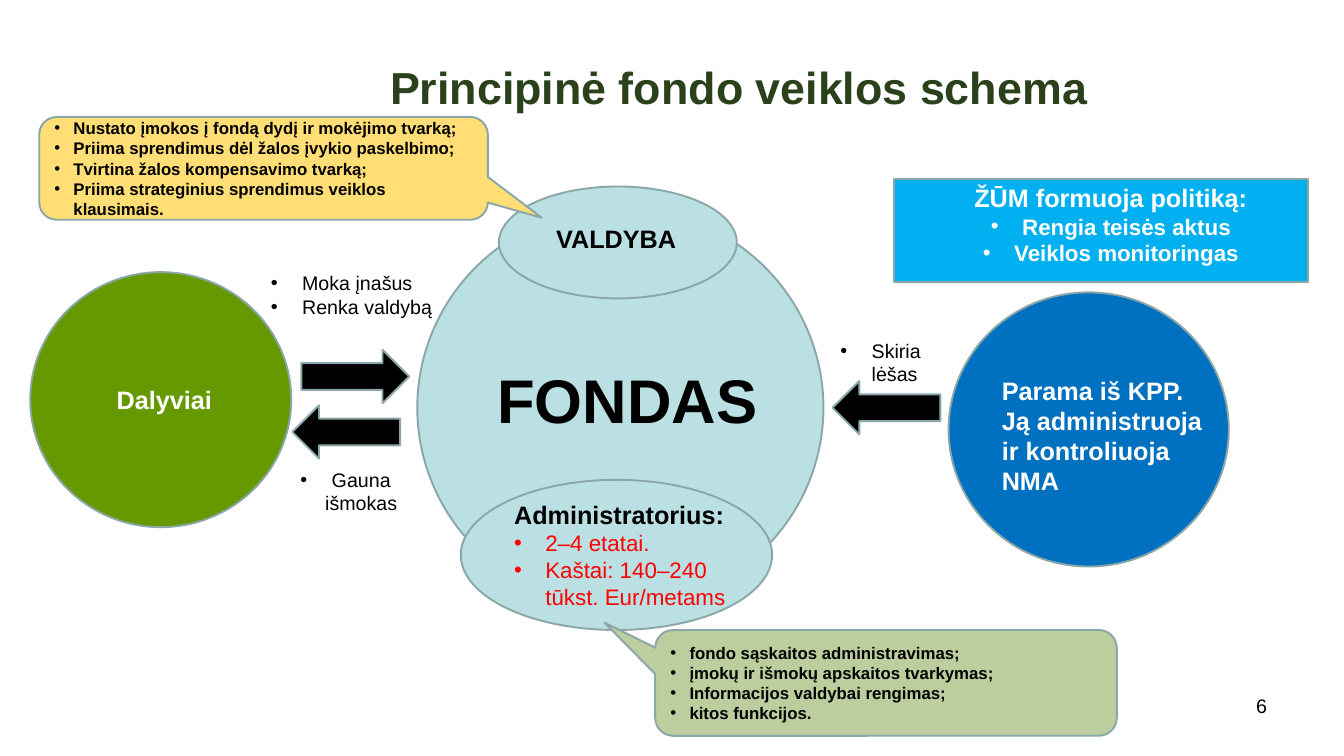
from dataclasses import dataclass
from typing import Optional

from lxml.etree import SubElement
from pptx import Presentation
from pptx.dml.color import RGBColor
from pptx.enum.shapes import MSO_SHAPE
from pptx.enum.text import MSO_ANCHOR, MSO_AUTO_SIZE, PP_ALIGN
from pptx.oxml.ns import qn
from pptx.util import Inches, Pt


@dataclass(frozen=True)
class Theme:
    font: str = "Arial"
    ink: str = "000000"
    paper: str = "FFFFFF"
    heading: str = "2A411B"
    alert: str = "FF0000"
    outline: str = "8AA6A8"
    members: str = "669900"
    support: str = "0070C0"
    fund: str = "BBE0E3"
    policy: str = "00B0F0"
    board_duties: str = "FFDE75"
    admin_duties: str = "BCCE9E"
    outline_width: float = 1.35
    hub: int = 44
    title: int = 32
    label: int = 18
    detail: int = 16
    note: int = 14
    duty: int = 12


THEME = Theme()
WIDTH, HEIGHT = Inches(13.33), Inches(7.5)
WIDE, NARROW = 0.31, 0.19  # bullet indents in inches


@dataclass(frozen=True)
class Box:
    """Place and size in percent of the slide's width and height."""
    left: float
    top: float
    width: float
    height: float

    def emu(self) -> tuple[int, int, int, int]:
        return (int(WIDTH * self.left / 100), int(HEIGHT * self.top / 100),
                int(WIDTH * self.width / 100), int(HEIGHT * self.height / 100))


@dataclass(frozen=True)
class Line:
    text: str
    size: int = THEME.label
    color: str = THEME.ink
    bold: bool = True
    indent: float = 0
    align: PP_ALIGN = PP_ALIGN.LEFT


@dataclass(frozen=True)
class Figure:
    kind: MSO_SHAPE
    box: Box
    fill: str
    adjustments: tuple[float, ...] = ()
    lines: tuple[Line, ...] = ()


@dataclass(frozen=True)
class Caption:
    box: Box
    lines: tuple[Line, ...]
    placeholder: Optional[int] = None
    anchor: MSO_ANCHOR = MSO_ANCHOR.TOP


def note(text: str, align: PP_ALIGN = PP_ALIGN.LEFT) -> Line:
    return Line(text, THEME.note, bold=False, indent=WIDE, align=align)


def duties(*texts: str) -> tuple[Line, ...]:
    return tuple(Line(text, THEME.duty, indent=NARROW) for text in texts)


def white(text: str, size: int = THEME.label, indent: float = 0,
          align: PP_ALIGN = PP_ALIGN.CENTER) -> Line:
    return Line(text, size, THEME.paper, indent=indent, align=align)


def cost(text: str) -> Line:
    return Line(text, THEME.detail, THEME.alert, False, WIDE)


def arrow(kind: MSO_SHAPE, left: float, top: float) -> Figure:
    return Figure(kind, Box(left, top, 8.02, 7.07), THEME.ink)


def write(frame, lines: tuple[Line, ...], anchor: MSO_ANCHOR) -> None:
    frame.word_wrap = True
    frame.auto_size = MSO_AUTO_SIZE.NONE
    frame.vertical_anchor = anchor
    for index, line in enumerate(lines):
        paragraph = frame.add_paragraph() if index else frame.paragraphs[0]
        properties = paragraph._p.get_or_add_pPr()
        properties.set("marL", str(Inches(line.indent)))
        properties.set("indent", str(-Inches(line.indent)))
        if line.indent:
            SubElement(properties, qn("a:buFont")).set("typeface", THEME.font)
            SubElement(properties, qn("a:buChar")).set("char", "•")
        else:
            SubElement(properties, qn("a:buNone"))
        paragraph.alignment = line.align
        paragraph.space_before = Pt(0)
        run = paragraph.add_run()
        run.text = line.text
        run.font.name = THEME.font
        run.font.size = Pt(line.size)
        run.font.bold = line.bold
        run.font.color.rgb = RGBColor.from_string(line.color)


def draw_figure(slide, figure: Figure) -> None:
    shape = slide.shapes.add_shape(figure.kind, *figure.box.emu())
    shape.shadow.inherit = False
    shape.fill.solid()
    shape.fill.fore_color.rgb = RGBColor.from_string(figure.fill)
    shape.line.color.rgb = RGBColor.from_string(THEME.outline)
    shape.line.width = Pt(THEME.outline_width)
    for index, value in enumerate(figure.adjustments):
        shape.adjustments[index] = value
    if figure.lines:
        write(shape.text_frame, figure.lines, MSO_ANCHOR.MIDDLE)


def draw_caption(slide, caption: Caption) -> None:
    if caption.placeholder is None:
        holder = slide.shapes.add_textbox(*caption.box.emu())
    else:
        holder = slide.placeholders[caption.placeholder]
        holder.left, holder.top, holder.width, holder.height = caption.box.emu()
        holder.element.getparent().append(holder.element)  # bring to front
    write(holder.text_frame, caption.lines, caption.anchor)


CENTER = PP_ALIGN.CENTER
OVAL, CALLOUT = MSO_SHAPE.OVAL, MSO_SHAPE.ROUNDED_RECTANGULAR_CALLOUT

SCHEME: tuple[Figure | Caption, ...] = (
    # Title and page number
    Caption(Box(10, 4.93, 90, 12.93),
            (Line("Principinė fondo veiklos schema", THEME.title, THEME.heading, align=CENTER),),
            0, MSO_ANCHOR.MIDDLE),
    Caption(Box(71.7, 91.07, 23.32, 6.93),
            (Line("6", THEME.note, bold=False, align=PP_ALIGN.RIGHT),)),
    # Members and support
    Figure(OVAL, Box(2.25, 36, 19.42, 33.73), THEME.members),
    Figure(OVAL, Box(70.58, 38.67, 20.85, 36.27), THEME.support),
    Caption(Box(4.12, 50.13, 16.2, 5.33), (white("Dalyviai"),)),
    Caption(Box(73.8, 48.93, 17.18, 17.47),
            (white("Parama iš KPP.", align=PP_ALIGN.LEFT),
             white("Ją administruoja ir kontroliuoja NMA", align=PP_ALIGN.LEFT))),
    # Fund with its board and administrator
    Figure(OVAL, Box(31.05, 27.47, 30.22, 52.93), THEME.fund),
    Caption(Box(34.65, 47.2, 24.08, 11.2), (Line("FONDAS", THEME.hub, align=CENTER),)),
    Figure(OVAL, Box(37.12, 24.67, 17.7, 14.8), THEME.fund),
    Caption(Box(40.65, 28.93, 12.9, 5.33), (Line("VALDYBA"),)),
    Figure(OVAL, Box(34.28, 63.47, 23.17, 19.87), THEME.fund),
    Caption(Box(37.5, 65.33, 17.78, 16.13),
            (Line("Administratorius:"), cost("2–4 etatai."),
             cost("Kaštai: 140–240 tūkst. Eur/metams")), 1),
    # Money flows
    arrow(MSO_SHAPE.RIGHT_ARROW, 22.43, 46.27),
    arrow(MSO_SHAPE.LEFT_ARROW, 21.75, 53.6),
    arrow(MSO_SHAPE.LEFT_ARROW, 61.95, 50.4),
    Caption(Box(19.42, 35.2, 16.35, 7.6), (note("Moka įnašus"), note("Renka valdybą"))),
    Caption(Box(18.82, 61.2, 13.8, 4.53), (note("Gauna išmokas", CENTER),)),
    Caption(Box(61.8, 44.13, 9.6, 7.6), (note("Skiria lėšas"),)),
    # Policy
    Figure(MSO_SHAPE.RECTANGLE, Box(66.53, 23.73, 30.83, 13.6), THEME.policy),
    Caption(Box(68.18, 23.47, 28.95, 20.67),
            (white("ŽŪM formuoja politiką:"),
             white("Rengia teisės aktus", THEME.detail, WIDE),
             white("Veiklos monitoringas", THEME.detail, WIDE)), 2),
    # Duties of the board and of the administrator
    Figure(CALLOUT, Box(2.92, 15.47, 33.38, 13.6), THEME.board_duties, (0.62, 0.48, 0.17),
           duties("Nustato įmokos į fondą dydį ir mokėjimo tvarką;",
                  "Priima sprendimus dėl žalos įvykio paskelbimo;",
                  "Tvirtina žalos kompensavimo tvarką;",
                  "Priima strateginius sprendimus veiklos klausimais.")),
    Figure(CALLOUT, Box(48.75, 83.33, 34.35, 14), THEME.admin_duties, (-0.61, -0.57, 0.17),
           duties("fondo sąskaitos administravimas;", "įmokų ir išmokų apskaitos tvarkymas;",
                  "Informacijos valdybai rengimas;", "kitos funkcijos.")),
)


def main() -> None:
    deck = Presentation()
    deck.slide_width, deck.slide_height = WIDTH, HEIGHT
    slide = deck.slides.add_slide(deck.slide_layouts[3])
    for part in SCHEME:
        if isinstance(part, Figure):
            draw_figure(slide, part)
        else:
            draw_caption(slide, part)
    deck.save("out.pptx")


if __name__ == "__main__":
    main()
